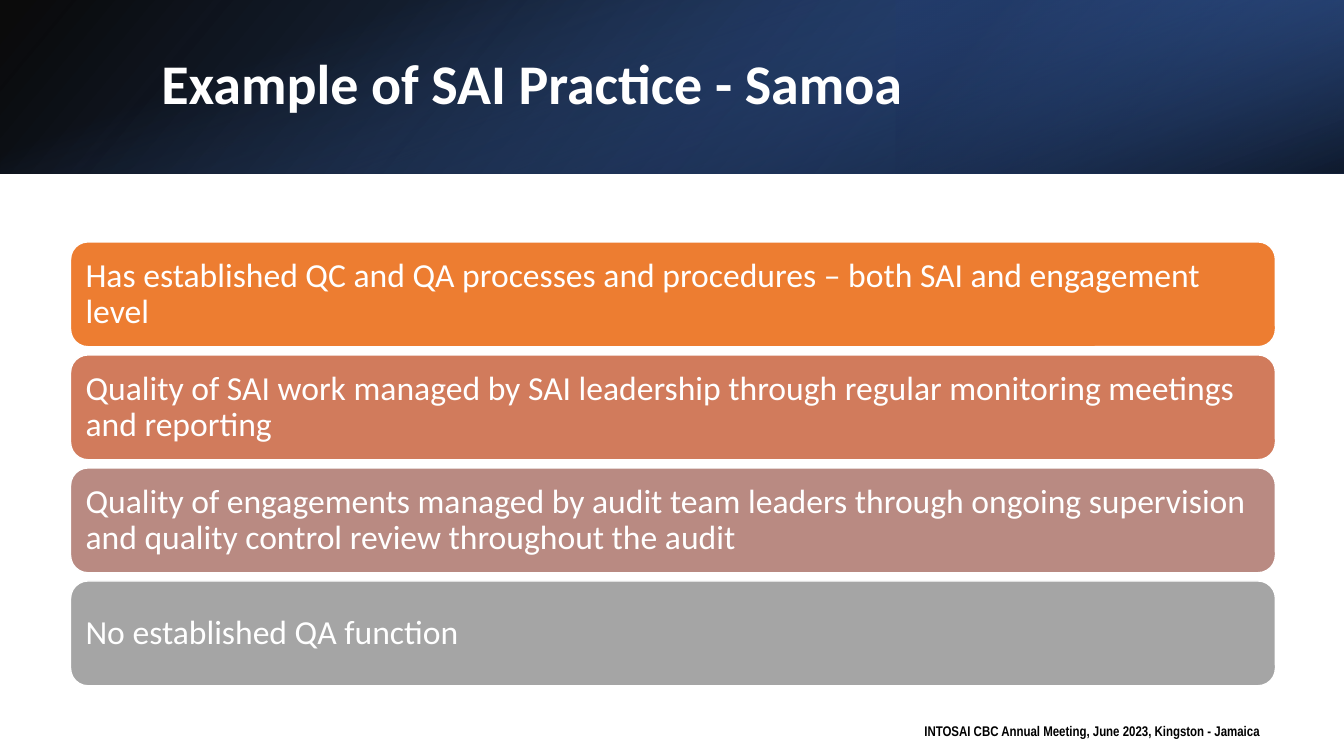
from pptx import Presentation, oxml, util as u
from pptx.dml.color import RGBColor
from pptx.enum import shapes, text
from pptx.oxml.ns import nsdecls, qn

WHITE = RGBColor(0xFF, 0xFF, 0xFF)
BLACK = RGBColor(0x00, 0x00, 0x00)
NAVY = RGBColor(0x20, 0x38, 0x64)
DEEP_BLUE = RGBColor(0x2F, 0x55, 0x97)
BLUE = RGBColor(0x44, 0x72, 0xC4)
ORANGE = RGBColor(0xED, 0x7D, 0x31)
TERRACOTTA = RGBColor(0xD1, 0x7B, 0x5C)
ROSE = RGBColor(0xB9, 0x8A, 0x82)
GREY = RGBColor(0xA5, 0xA5, 0xA5)

HEADER_H = 22.93
BAR_TOP, BAR_H, BAR_PITCH = 32, 13.87, 14.95
BARS = [
    (ORANGE, "Has established QC and QA processes and procedures – both SAI and engagement level"),
    (TERRACOTTA, "Quality of SAI work managed by SAI leadership through regular monitoring meetings and reporting"),
    (ROSE, "Quality of engagements managed by audit team leaders through ongoing supervision "
           "and quality control review throughout the audit"),
    (GREY, "No established QA function"),
]


def write(tf, content, font="Calibri", size=24, color=WHITE, bold=False,
          anchor=text.MSO_ANCHOR.MIDDLE, spacing=0.9):
    """Fill a text frame with one left-aligned paragraph."""
    tf.word_wrap = True
    tf.vertical_anchor = anchor
    p = tf.paragraphs[0]
    p.alignment = text.PP_ALIGN.LEFT
    p.line_spacing = spacing
    r = p.add_run()
    r.text = content
    f = r.font
    f.name, f.size, f.bold = font, u.Pt(size), bold
    f.color.rgb = color


class Deck:
    """Holds the slide; places are columns and rows of a 100 by 100 grid."""

    def __init__(self):
        self.prs = Presentation()
        self.prs.slide_width, self.prs.slide_height = u.Inches(13.33), u.Inches(7.5)
        self.s = self.prs.slides.add_slide(self.prs.slide_layouts[5])

    def box(self, col, row, cols, rows):
        w, h = self.prs.slide_width / 100, self.prs.slide_height / 100
        return int(col * w), int(row * h), int(cols * w), int(rows * h)

    def shape(self, kind, x, y, w, h):
        sp = self.s.shapes.add_shape(kind, x, y, w, h)
        sp.shadow.inherit = False
        return sp

    def band(self, place, stops, angle, rotation=0, flip=False):
        """Gradient rectangle; stops are (position, colour, opacity) in percent."""
        x, y, w, h = self.box(*place)
        if rotation == 90:  # swap the sides about the same centre
            x, y, w, h = x + (w - h) // 2, y + (h - w) // 2, h, w
        sp = self.shape(shapes.MSO_SHAPE.RECTANGLE, x, y, w, h)
        sp.rotation = rotation
        sp.line.fill.background()
        sp.fill.background()
        pr = sp._element.spPr
        if flip:
            pr.find(qn("a:xfrm")).set("flipH", "1")
        gs = "".join(
            f'<a:gs pos="{pos * 1000}"><a:srgbClr val="{color}">'
            f'<a:alpha val="{alpha * 1000}"/></a:srgbClr></a:gs>'
            for pos, color, alpha in stops)
        grad = oxml.parse_xml(
            f'<a:gradFill {nsdecls("a")} rotWithShape="1"><a:gsLst>{gs}</a:gsLst>'
            f'<a:lin ang="{angle * 60000}" scaled="0"/></a:gradFill>')
        pr.replace(pr.find(qn("a:noFill")), grad)

    def title(self, place, content, **fmt):
        sp = self.s.shapes.title
        sp.left, sp.top, sp.width, sp.height = self.box(*place)
        write(sp.text_frame, content, **fmt)
        self.s.shapes._spTree.append(sp._element)  # bring in front of the bands

    def bar(self, place, color, content):
        sp = self.shape(shapes.MSO_SHAPE.ROUNDED_RECTANGLE, *self.box(*place))
        sp.fill.solid()
        sp.fill.fore_color.rgb = color
        sp.line.color.rgb = WHITE
        sp.line.width = u.Pt(1)
        tf = sp.text_frame
        tf.margin_left = tf.margin_right = tf.margin_top = tf.margin_bottom = u.Inches(0.1)
        write(tf, content)

    def label(self, place, content, **fmt):
        tf = self.s.shapes.add_textbox(*self.box(*place)).text_frame
        write(tf, content, **fmt)
        tf.auto_size = text.MSO_AUTO_SIZE.SHAPE_TO_FIT_TEXT


def main():
    deck = Deck()

    # Header: three layered gradients
    header = (0, 0, 100, HEADER_H)
    deck.band(header, [(0, BLACK, 96), (100, DEEP_BLUE, 100)], 140, flip=True)
    deck.band((66.67, 0, 33.33, HEADER_H), [(19, NAVY, 68), (100, BLUE, 79)], 320,
              rotation=180, flip=True)
    deck.band(header, [(23, BLUE, 0), (99, BLACK, 74)], 340, rotation=90)
    deck.title((11.25, 5.07, 82.37, 12.8), "Example of SAI Practice - Samoa",
               size=40, bold=True)

    # Practice bars
    for i, (color, content) in enumerate(BARS):
        deck.bar((5.25, BAR_TOP + i * BAR_PITCH, 89.65, BAR_H), color, content)

    # Footer
    deck.label((68.04, 94.93, 26.93, 3.6),
               "INTOSAI CBC Annual Meeting, June 2023, Kingston - Jamaica",
               font="Arial Narrow", size=10, color=BLACK, bold=True,
               anchor=text.MSO_ANCHOR.TOP, spacing=1.0)

    deck.prs.save("out.pptx")


if __name__ == "__main__":
    main()
